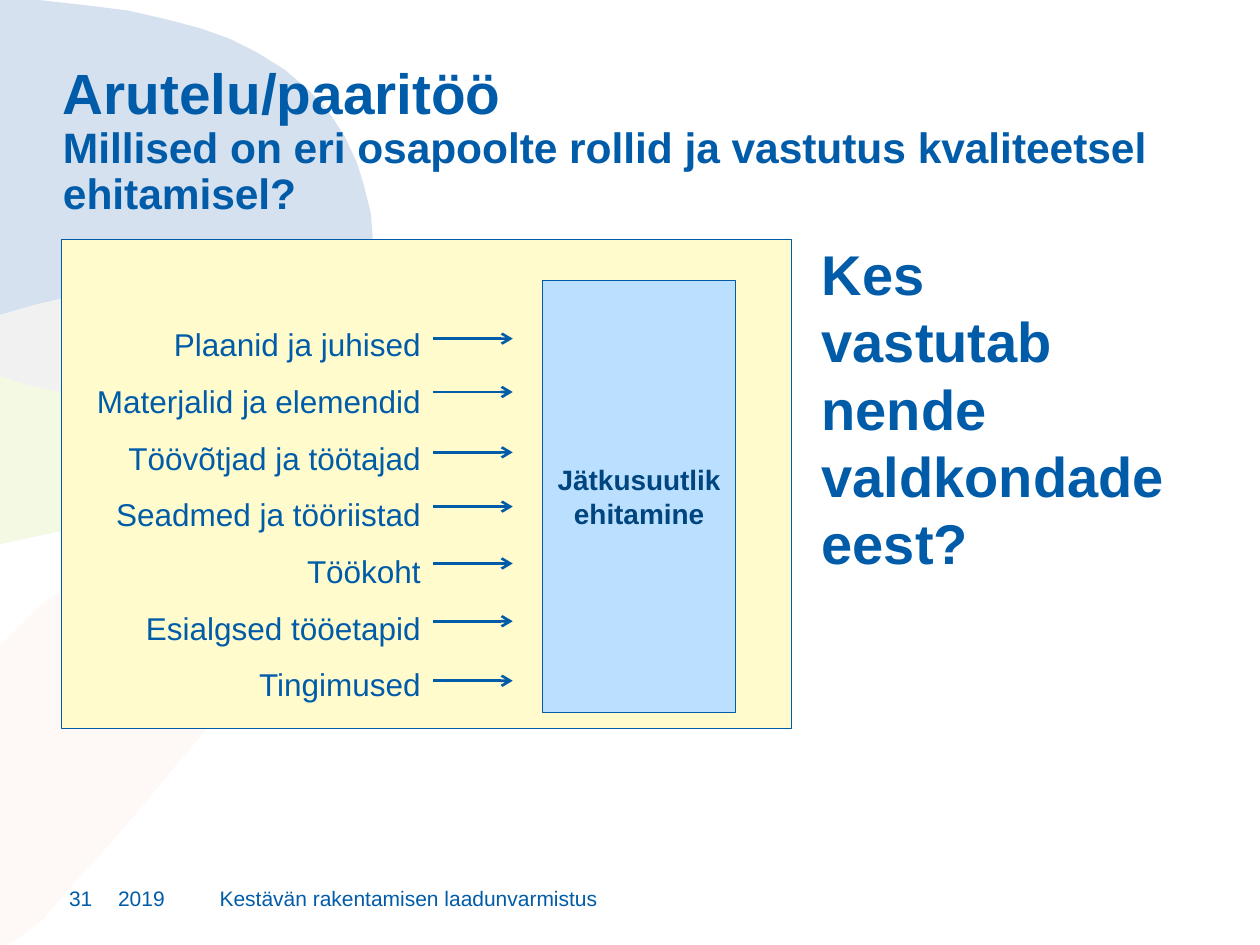
from dataclasses import dataclass

from lxml.etree import SubElement
from pptx import Presentation
from pptx.dml.color import RGBColor
from pptx.enum.shapes import MSO_CONNECTOR as Connector, MSO_SHAPE as Preset
from pptx.enum.text import MSO_ANCHOR as Anchor, PP_ALIGN as Align
from pptx.oxml.ns import qn
from pptx.util import Pt


@dataclass(frozen=True)
class Theme:
    font: str = "Arial"
    text: str = "005CA8"
    dark_text: str = "00457E"
    panel: str = "FFFBCC"
    outcome: str = "BBE0FF"
    rose: str = "FEF9F7"
    green: str = "F3F9E3"
    blue: str = "D6E1F0"
    grey: str = "F1F1F1"
    title_size: float = 32.4
    subtitle_size: float = 24.3
    question_size: float = 32
    factor_size: float = 18
    outcome_size: float = 16
    footer_size: float = 12


THEME = Theme()

TITLE = "Arutelu/paaritöö"
SUBTITLE = "Millised on eri osapoolte rollid ja vastutus kvaliteetsel ehitamisel?"
QUESTION = "Kes vastutab nende valdkondade eest?"
OUTCOME = "Jätkusuutlik ehitamine"
FACTORS = [
    ("Plaanid ja juhised", 193.5),
    ("Materjalid ja elemendid", 224),
    ("Töövõtjad ja töötajad", 258.5),
    ("Seadmed ja tööriistad", 289.5),
    ("Töökoht", 322),
    ("Esialgsed tööetapid", 355),
    ("Tingimused", 389),
]
FOOTER = [
    ("2019", 67.5, 50.5),
    ("Kestävän rakentamisen laadunvarmistus", 125.5, 289.5),
    ("31", 39.5, 28),
]

GREY_TOP = [(0, 180), (21, 174), (47, 168), (74, 163), (102, 159), (128, 158),
            (152, 159.5), (171, 163), (187, 169), (198, 176), (204, 181)]
GREY_BOTTOM = [(204, 181), (197, 193), (186, 206), (173, 217), (158, 225),
               (142, 232), (125, 235.5), (108, 236), (89, 235), (66, 230),
               (38, 225), (16, 220), (0, 215)]
BLUE_OUTER = [(209, 168), (212, 153), (213, 135), (212, 122), (208, 106),
              (204, 93), (197, 78), (188, 64), (177, 52), (163, 40), (147, 30),
              (131, 22), (114, 16), (95, 11), (73, 6.5), (49, 3), (22, 0), (0, 0)]
GREEN_OUTER = [(0, 311), (42, 302), (75, 294), (100, 287), (125, 279), (146, 270),
               (164, 260), (179, 251), (192, 240), (202, 229), (208, 219),
               (212, 209), (214, 204), (213, 197), (210, 189)]
ROSE_OUTLINE = [(100, 313), (80, 316), (61, 323), (42, 333), (23, 346), (0, 369),
                (0, 540), (4, 540), (12, 535), (25, 525), (42, 505), (64, 481),
                (86, 455), (100, 438.5), (117, 418), (130, 398), (138, 385),
                (144, 371.5), (148, 359), (149, 346), (148, 339), (143, 330),
                (136, 323), (125, 318), (112, 314)]
PETALS = [
    (THEME.rose, ROSE_OUTLINE),
    (THEME.green, GREY_BOTTOM + GREEN_OUTER),
    (THEME.blue, GREY_TOP + BLUE_OUTER),
    (THEME.grey, GREY_TOP + GREY_BOTTOM[1:]),
]


def style(font, size, color=THEME.text, bold=False):
    font.name, font.size, font.bold = THEME.font, Pt(size), bold
    font.color.rgb = RGBColor.from_string(color)


def add_petal(slide, color, points):
    builder = slide.shapes.build_freeform(*points[0], scale=Pt(1))
    builder.add_line_segments(points[1:], close=True)
    petal = builder.convert_to_shape()
    petal.shadow.inherit = False
    petal.fill.solid()
    petal.fill.fore_color.rgb = RGBColor.from_string(color)
    petal.line.fill.background()


def add_text_frame(slide, box, inset=True, anchor=Anchor.TOP):
    frame = slide.shapes.add_textbox(*map(Pt, box)).text_frame
    frame.word_wrap = True
    frame.vertical_anchor = anchor
    if not inset:
        frame.margin_left = frame.margin_right = 0
        frame.margin_top = frame.margin_bottom = 0
    return frame


def add_rectangle(slide, box, color, line_width):
    rectangle = slide.shapes.add_shape(Preset.RECTANGLE, *map(Pt, box))
    rectangle.shadow.inherit = False
    rectangle.fill.solid()
    rectangle.fill.fore_color.rgb = RGBColor.from_string(color)
    rectangle.line.color.rgb = RGBColor.from_string(THEME.text)
    rectangle.line.width = Pt(line_width)
    return rectangle


def add_arrow(slide, left, right, y):
    arrow = slide.shapes.add_connector(
        Connector.STRAIGHT, Pt(left), Pt(y), Pt(right), Pt(y))
    arrow.line.color.rgb = RGBColor.from_string(THEME.text)
    arrow.line.width = Pt(1.5)
    SubElement(arrow.line._get_or_add_ln(), qn("a:tailEnd"), type="arrow")
    SubElement(arrow._element.spPr, qn("a:effectLst"))


def add_headings(slide):
    paragraph = add_text_frame(slide, (36, 37.5, 662.5, 79), inset=False).paragraphs[0]
    paragraph.line_spacing = 0.9
    title = paragraph.add_run()
    title.text = TITLE
    style(title.font, THEME.title_size, bold=True)
    paragraph.add_line_break()
    subtitle = paragraph.add_run()
    subtitle.text = SUBTITLE
    style(subtitle.font, THEME.subtitle_size, bold=True)

    question = add_text_frame(slide, (469.5, 137, 198.5, 279), inset=False).paragraphs[0]
    question.text = QUESTION
    style(question.font, THEME.question_size, bold=True)


def add_diagram(slide):
    add_rectangle(slide, (35, 137, 417, 279), THEME.panel, 0.5)
    outcome = add_rectangle(slide, (310, 160.5, 110.5, 246.5), THEME.outcome, 0.75)
    outcome.text_frame.word_wrap = True
    outcome.text_frame.vertical_anchor = Anchor.MIDDLE
    paragraph = outcome.text_frame.paragraphs[0]
    paragraph.text = OUTCOME
    paragraph.alignment = Align.CENTER
    style(paragraph.font, THEME.outcome_size, THEME.dark_text, bold=True)

    frame = add_text_frame(slide, (29.5, 171.5, 218, 236))
    for index, (label, arrow_y) in enumerate(FACTORS):
        paragraph = frame.add_paragraph() if index else frame.paragraphs[0]
        paragraph.text = label
        paragraph.alignment = Align.RIGHT
        paragraph.line_spacing = 1.5
        style(paragraph.font, THEME.factor_size)
        add_arrow(slide, 247.5, 293, arrow_y)


def main():
    """Build the discussion slide on roles in quality construction."""
    presentation = Presentation()
    presentation.slide_width, presentation.slide_height = Pt(720), Pt(540)
    slide = presentation.slides.add_slide(presentation.slide_layouts[6])
    for color, points in PETALS:
        add_petal(slide, color, points)
    for text, left, width in FOOTER:
        box = (left, 509, width, 11.5)
        paragraph = add_text_frame(slide, box, False, Anchor.BOTTOM).paragraphs[0]
        paragraph.text = text
        style(paragraph.font, THEME.footer_size)
    add_headings(slide)
    add_diagram(slide)
    presentation.save("out.pptx")


if __name__ == "__main__":
    main()
